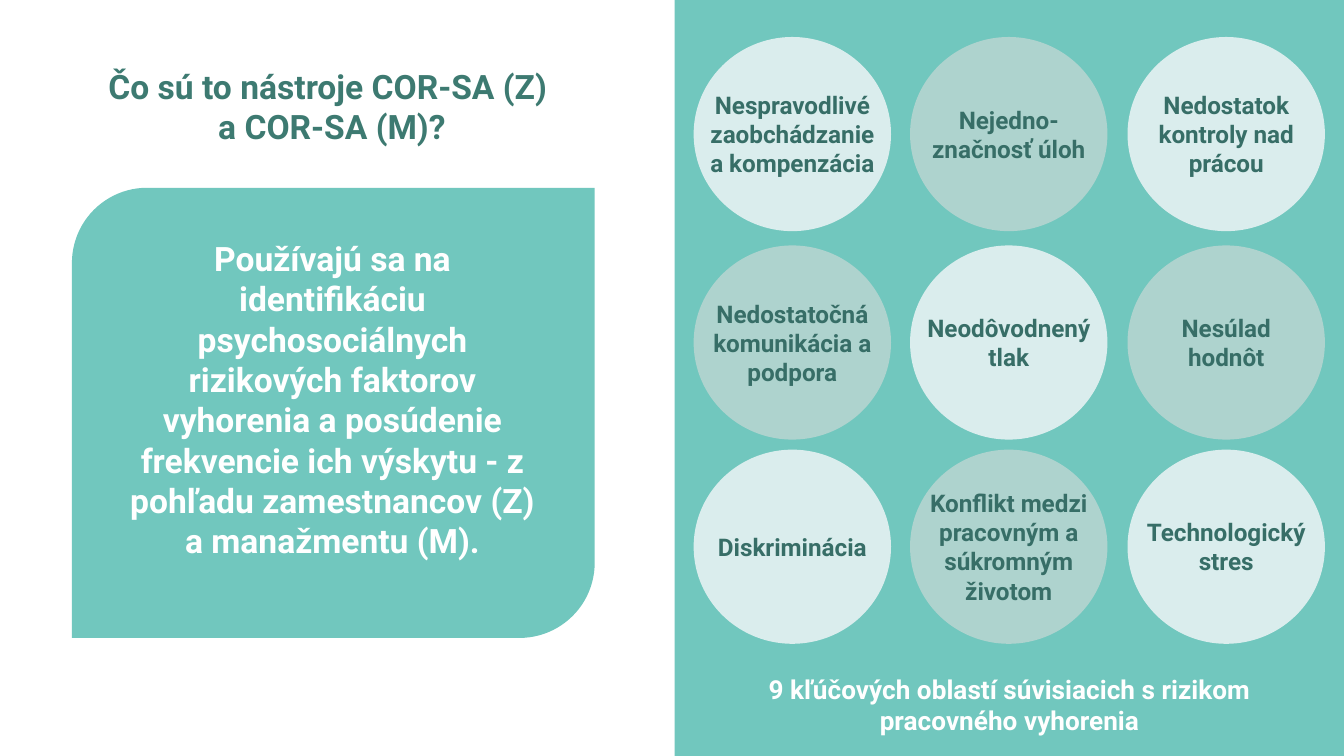
from pptx import Presentation
from pptx.dml.color import RGBColor
from pptx.enum.shapes import MSO_SHAPE
from pptx.enum.text import MSO_ANCHOR, PP_ALIGN
from pptx.util import Cm, Pt

RECTANGLE = MSO_SHAPE.RECTANGLE
LEAF = MSO_SHAPE.ROUND_2_DIAG_RECTANGLE
OVAL = MSO_SHAPE.OVAL
CENTER = PP_ALIGN.CENTER
TOP = MSO_ANCHOR.TOP
MIDDLE = MSO_ANCHOR.MIDDLE

COLORS = {
    "teal": "71C7BE",
    "title": "3D7A71",
    "risk": "376E67",
    "pale": "DAEDED",
    "sage": "AED3CE",
    "white": "FFFFFF",
}

presentation = Presentation()
presentation.slide_width = Cm(25.4)
presentation.slide_height = Cm(14.29)
slide = presentation.slides.add_slide(presentation.slide_layouts[6])


def add_filled(kind, left, top, width, height, color):
    shape = slide.shapes.add_shape(kind, Cm(left), Cm(top), Cm(width), Cm(height))
    shape.shadow.inherit = False
    shape.fill.solid()
    shape.fill.fore_color.rgb = RGBColor.from_string(COLORS[color])
    shape.line.fill.background()
    return shape


def write(shape, lines, size, color, margins, anchor=TOP, wrap=True):
    frame = shape.text_frame
    horizontal, vertical = Cm(margins[0]), Cm(margins[1])
    frame_format = {
        "word_wrap": wrap,
        "vertical_anchor": anchor,
        "margin_left": horizontal,
        "margin_right": horizontal,
        "margin_top": vertical,
        "margin_bottom": vertical,
    }
    for name, value in frame_format.items():
        setattr(frame, name, value)
    frame.text = lines
    font_format = {"name": "Roboto", "size": Pt(size), "bold": True}
    for paragraph in frame.paragraphs:
        paragraph.alignment = CENTER
        for run in paragraph.runs:
            for name, value in font_format.items():
                setattr(run.font, name, value)
            run.font.color.rgb = RGBColor.from_string(COLORS[color])


add_filled(RECTANGLE, 12.75, 0, 12.67, 14.29, "teal")
purpose_panel = add_filled(LEAF, 1.36, 3.55, 9.88, 8.51, "teal")
purpose_panel.adjustments[0] = 0.167
purpose_panel.adjustments[1] = 0

texts = [
    (-0.1, 1.25, 12.75, 2.31, "Čo sú to nástroje COR-SA (Z) \na COR-SA (M)?", 18, "title", (0, 0)),
    (2.16, 4.37, 8.25, 6.4,
     "Používajú sa na identifikáciu psychosociálnych rizikových faktorov vyhorenia "
     "a posúdenie frekvencie ich výskytu - z pohľadu zamestnancov (Z) a manažmentu (M).",
     18, "white", (0.25, 0.13)),
    (13.11, 12.6, 11.94, 1.45,
     "9 kľúčových oblastí súvisiacich s rizikom pracovného vyhorenia",
     14, "white", (0.25, 0.13)),
]
for left, top, width, height, wording, size, color, margins in texts:
    box = slide.shapes.add_textbox(Cm(left), Cm(top), Cm(width), Cm(height))
    write(box, wording, size, color, margins)

risk_areas = [
    ["Nespravodlivé\vzaobchádzanie\va kompenzácia", "Nejedno-\vznačnosť úloh",
     "Nedostatok\vkontroly nad\vprácou"],
    ["Nedostatočná\vkomunikácia a\vpodpora", "Neodôvodnený\vtlak", "Nesúlad\vhodnôt"],
    ["Diskriminácia", "Konflikt medzi\vpracovným a\vsúkromným\vživotom",
     "Technologický\vstres"],
]
column_lefts = [13.11, 17.2, 21.31]
row_tops = [0.7, 4.64, 8.5]
for row, (top, areas) in enumerate(zip(row_tops, risk_areas)):
    for column, (left, area) in enumerate(zip(column_lefts, areas)):
        color = "sage" if (row + column) % 2 else "pale"
        circle = add_filled(OVAL, left, top, 3.73, 3.67, color)
        write(circle, area, 13, "risk", (0, 0), MIDDLE, False)

presentation.save("out.pptx")
